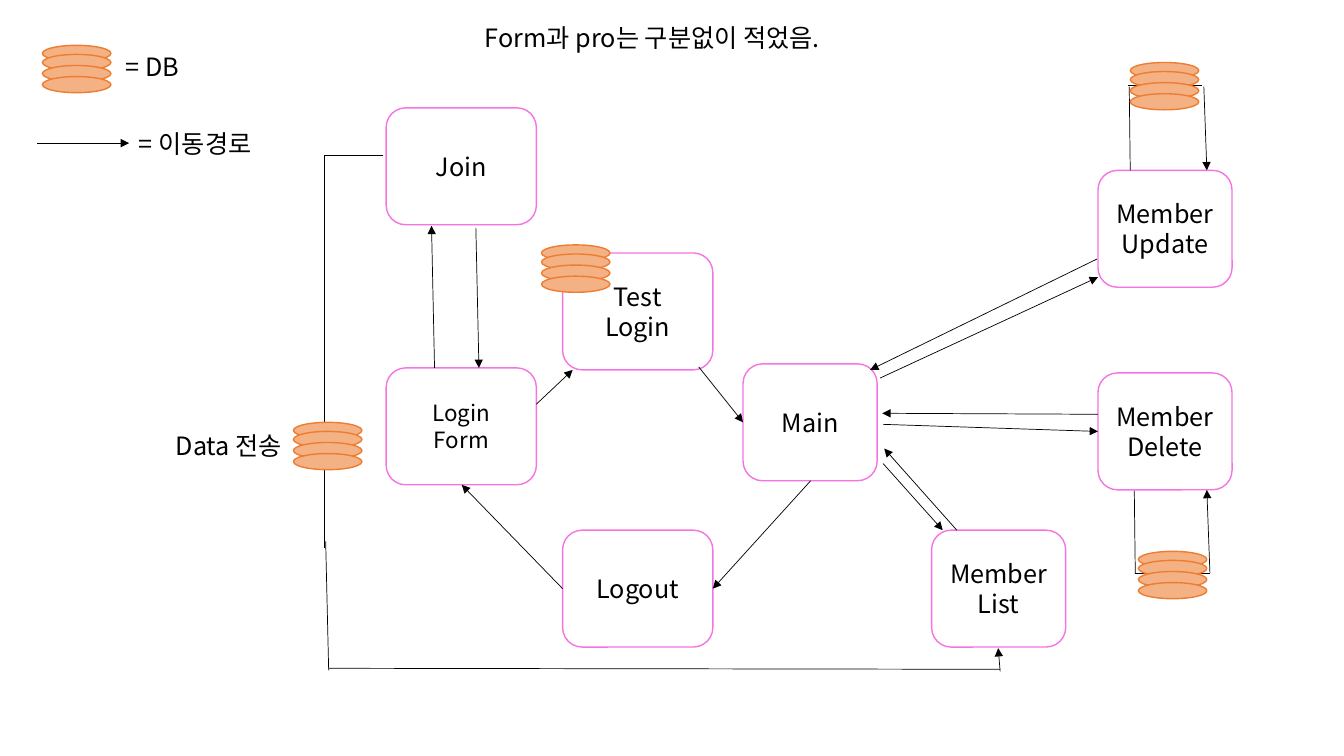
from lxml import etree
from pptx import Presentation
from pptx.dml.color import RGBColor
from pptx.enum.shapes import MSO_CONNECTOR, MSO_SHAPE
from pptx.enum.text import MSO_ANCHOR, MSO_AUTO_SIZE, PP_ALIGN
from pptx.oxml.ns import qn
from pptx.util import Pt

PX = 9144
FONT = "Noto Sans CJK KR"
BLACK = RGBColor(0x00, 0x00, 0x00)
WHITE = RGBColor(0xFF, 0xFF, 0xFF)
PINK = RGBColor(0xF5, 0x73, 0xE2)
PEACH = RGBColor(0xF4, 0xB1, 0x83)
ORANGE = RGBColor(0xED, 0x7D, 0x31)
ROUNDED = MSO_SHAPE.ROUNDED_RECTANGLE
ELLIPSE = MSO_SHAPE.OVAL
STRAIGHT = MSO_CONNECTOR.STRAIGHT
ELBOW = MSO_CONNECTOR.ELBOW
TOP, MIDDLE = MSO_ANCHOR.TOP, MSO_ANCHOR.MIDDLE
LEFT, CENTER = PP_ALIGN.LEFT, PP_ALIGN.CENTER
GROW = MSO_AUTO_SIZE.SHAPE_TO_FIT_TEXT

presentation = Presentation()
presentation.slide_width = 1333 * PX
presentation.slide_height = 750 * PX
slide = presentation.slides.add_slide(presentation.slide_layouts[5])
shapes = slide.shapes


def write_text(shape, text, size, alignment, anchor):
    frame = shape.text_frame
    frame.text = text
    frame.vertical_anchor = anchor
    for paragraph in frame.paragraphs:
        paragraph.alignment = alignment
        paragraph.line_spacing = Pt(round(size * 1.2, 1))
        for run in paragraph.runs:
            run.font.size = Pt(size)
            run.font.name = FONT
            run.font.color.rgb = BLACK
            etree.SubElement(run.font._element, qn("a:ea"), typeface=FONT)


def add_filled(kind, left, top, width, height, fill, outline):
    shape = shapes.add_shape(kind, left * PX, top * PX, width * PX, height * PX)
    shape.shadow.inherit = False
    shape.fill.solid()
    shape.fill.fore_color.rgb = fill
    shape.line.color.rgb = outline
    shape.line.width = Pt(1)
    return shape


title = shapes.title
title.left, title.top, title.width, title.height = 471 * PX, 17 * PX, 377 * PX, 40 * PX
write_text(title, "Form과 pro는 구분없이 적었음.", 18, LEFT, TOP)
title.text_frame.word_wrap = False
title.text_frame.auto_size = GROW

pages = [
    ("Login\nForm", 383, 365, 149, 16),
    ("Main", 737, 361, 133, 18),
    ("Join", 383, 107, 149, 18),
    ("Member\nList", 924, 526, 133, 18),
    ("Member\nDelete", 1089, 370, 133, 18),
    ("Member\nUpdate", 1089, 169, 133, 18),
    ("Logout", 558, 526, 149, 18),
    ("Test\nLogin", 558, 251, 149, 18),
]
for text, left, top, width, size in pages:
    page = add_filled(ROUNDED, left, top, width, 116, WHITE, PINK)
    write_text(page, text, size, CENTER, MIDDLE)

data_label = add_filled(ROUNDED, 140, 423, 174, 38, WHITE, WHITE)
write_text(data_label, "Data 전송", 18, CENTER, MIDDLE)

arrows = [
    (532, 401, 568, 367), (804, 477, 707, 584), (558, 584, 458, 481),
    (431, 365, 428, 224), (472, 226, 475, 365), (876, 421, 1089, 428),
    (876, 460, 935, 526), (873, 375, 1089, 275), (992, 666, 990, 643),
    (1088, 257, 863, 367), (1194, 86, 1197, 169), (1200, 568, 1197, 486),
    (949, 526, 877, 445), (1089, 411, 875, 410), (693, 364, 737, 419),
    (37, 142, 128, 142),
]
plain_lines = [
    (326, 663, 992, 664), (1121, 169, 1120, 86), (1119, 85, 1192, 85),
    (1126, 569, 1125, 487), (1126, 569, 1200, 569), (323, 537, 326, 665),
]
corner_lines = [(380, 154, 322, 544)]
routes = [(STRAIGHT, True, arrows), (STRAIGHT, False, plain_lines), (ELBOW, False, corner_lines)]
for kind, has_head, ends in routes:
    for points in ends:
        connector = shapes.add_connector(kind, *[value * PX for value in points])
        connector.line.color.rgb = BLACK
        connector.line.width = Pt(0.5)
        properties = connector._element.spPr
        if has_head:
            etree.SubElement(properties.find(qn("a:ln")), qn("a:tailEnd"), type="triangle")
        if kind == ELBOW:
            properties.find(qn("a:prstGeom")).set("prst", "bentConnector2")
        etree.SubElement(properties, qn("a:effectLst"))

databases = [(42, 45), (291, 419), (1129, 547), (1121, 62), (537, 243)]
for left, top in databases:
    for offset in (0, 9, 20, 31):
        add_filled(ELLIPSE, left, top + offset, 68, 16, PEACH, ORANGE)

legend = [("= DB", 115, 46, 80), ("= 이동경로", 128, 122, 148)]
for text, left, top, width in legend:
    label = shapes.add_textbox(left * PX, top * PX, width * PX, 40 * PX)
    write_text(label, text, 18, LEFT, TOP)
    label.text_frame.word_wrap = False
    label.text_frame.auto_size = GROW

presentation.save("out.pptx")
